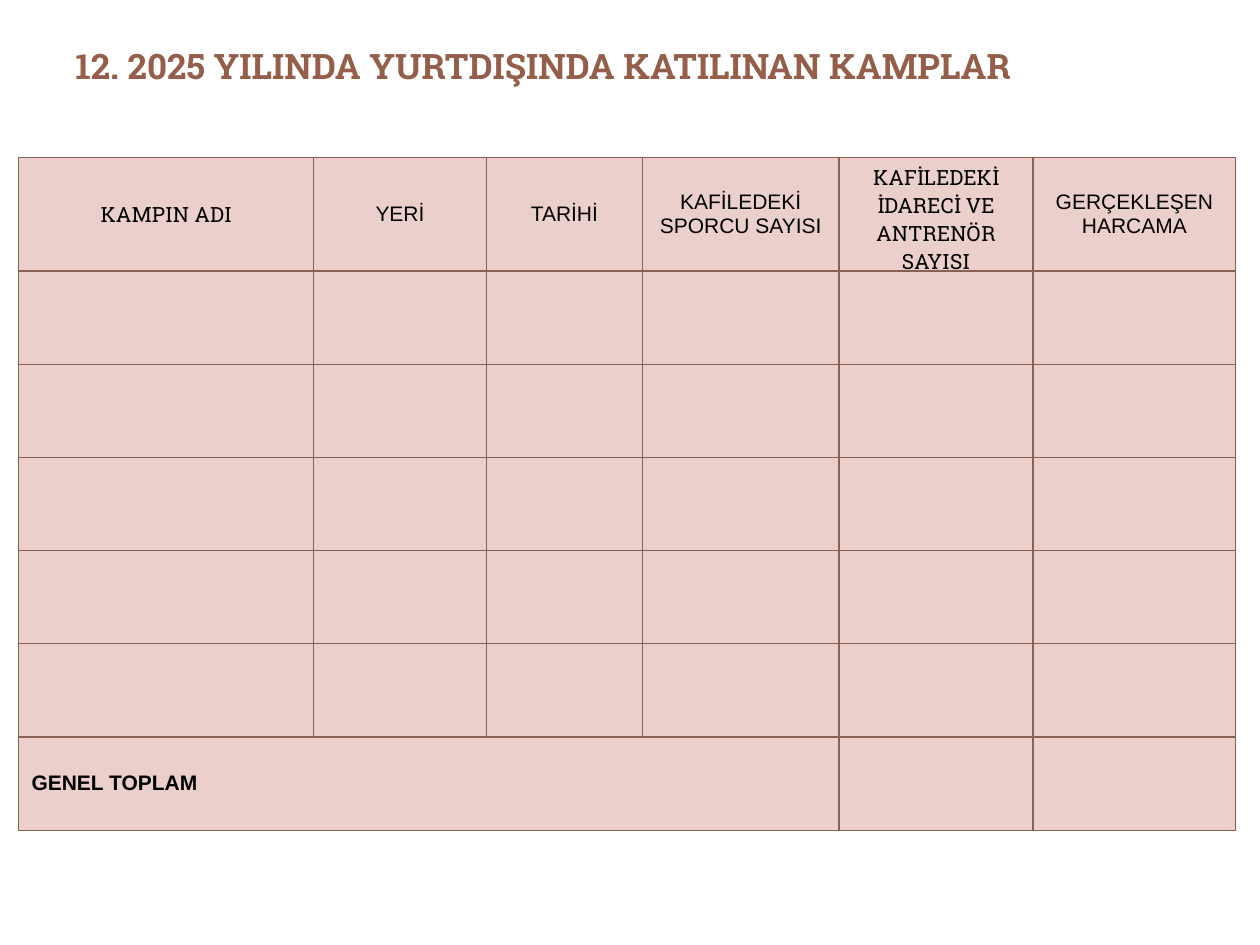
from lxml import etree
from pptx import Presentation
from pptx import util as u
from pptx.dml.color import RGBColor
from pptx.enum import text as t
from pptx.oxml.ns import qn

COLORS = {"title": "955E4B", "text": "000000", "cell": "EACFCB", "border": "896154"}
SLAB = "Roboto Slab"
SANS = "Arial"
HEADERS = [
    ("KAMPIN ADI", SLAB, 2.34),
    ("YERİ", SANS, 1.37),
    ("TARİHİ", SANS, 1.24),
    ("KAFİLEDEKİ SPORCU SAYISI", SANS, 1.56),
    ("KAFİLEDEKİ İDARECİ VE ANTRENÖR SAYISI", SLAB, 1.54),
    ("GERÇEKLEŞEN HARCAMA", SANS, 1.61),
]
ROW_COUNT = 7
ROW_HEIGHT = 0.74


def write_text(frame, content, font=SANS, size=12, color="text", bold=False,
               align=t.PP_ALIGN.LEFT, space_before=0):
    paragraph = frame.paragraphs[0]
    paragraph.alignment = align
    paragraph.space_before = u.Pt(space_before)
    run = paragraph.add_run()
    run.text = content
    run.font.name = font
    run.font.size = u.Pt(size)
    run.font.bold = bold
    run.font.color.rgb = RGBColor.from_string(COLORS[color])


def add_title(slide, content):
    shape = slide.shapes.add_textbox(u.Inches(0.5), u.Inches(0.3), u.Inches(9), u.Inches(1.25))
    shape.text_frame.word_wrap = True
    write_text(shape.text_frame, content, font=SLAB, size=20, color="title", bold=True)


def set_borders(cell, color, width):
    properties = cell._tc.get_or_add_tcPr()
    for index, side in enumerate(("a:lnL", "a:lnR", "a:lnT", "a:lnB")):
        line = etree.Element(qn(side), w=str(u.Pt(width)))
        fill = etree.SubElement(line, qn("a:solidFill"))
        etree.SubElement(fill, qn("a:srgbClr"), val=COLORS[color])
        properties.insert(index, line)


def style_cell(cell):
    cell.fill.solid()
    cell.fill.fore_color.rgb = RGBColor.from_string(COLORS["cell"])
    cell.vertical_anchor = t.MSO_ANCHOR.MIDDLE
    set_borders(cell, "border", 0.75)


def add_camp_table(slide):
    height = u.Inches(5.34)
    shape = slide.shapes.add_table(ROW_COUNT, len(HEADERS), u.Inches(0.15), u.Inches(1.25),
                                   u.Inches(9.66), height)
    table = shape.table
    table.first_row = False
    table.horz_banding = False
    for row in table.rows:
        row.height = u.Inches(ROW_HEIGHT)
    for cell in table.iter_cells():
        style_cell(cell)
    for index, (header, font, width) in enumerate(HEADERS):
        table.columns[index].width = u.Inches(width)
        write_text(table.cell(0, index).text_frame, header, font=font,
                   align=t.PP_ALIGN.CENTER, space_before=2.4)
    last = ROW_COUNT - 1
    total = table.cell(last, 0)
    total.merge(table.cell(last, 3))
    write_text(total.text_frame, "GENEL TOPLAM", bold=True, space_before=2.4)
    shape.height = height


def main():
    presentation = Presentation()
    presentation.slide_width = u.Inches(10)
    presentation.slide_height = u.Inches(7.5)
    slide = presentation.slides.add_slide(presentation.slide_layouts[6])
    add_title(slide, "12. 2025 YILINDA YURTDIŞINDA KATILINAN KAMPLAR")
    add_camp_table(slide)
    presentation.save("out.pptx")


if __name__ == "__main__":
    main()
